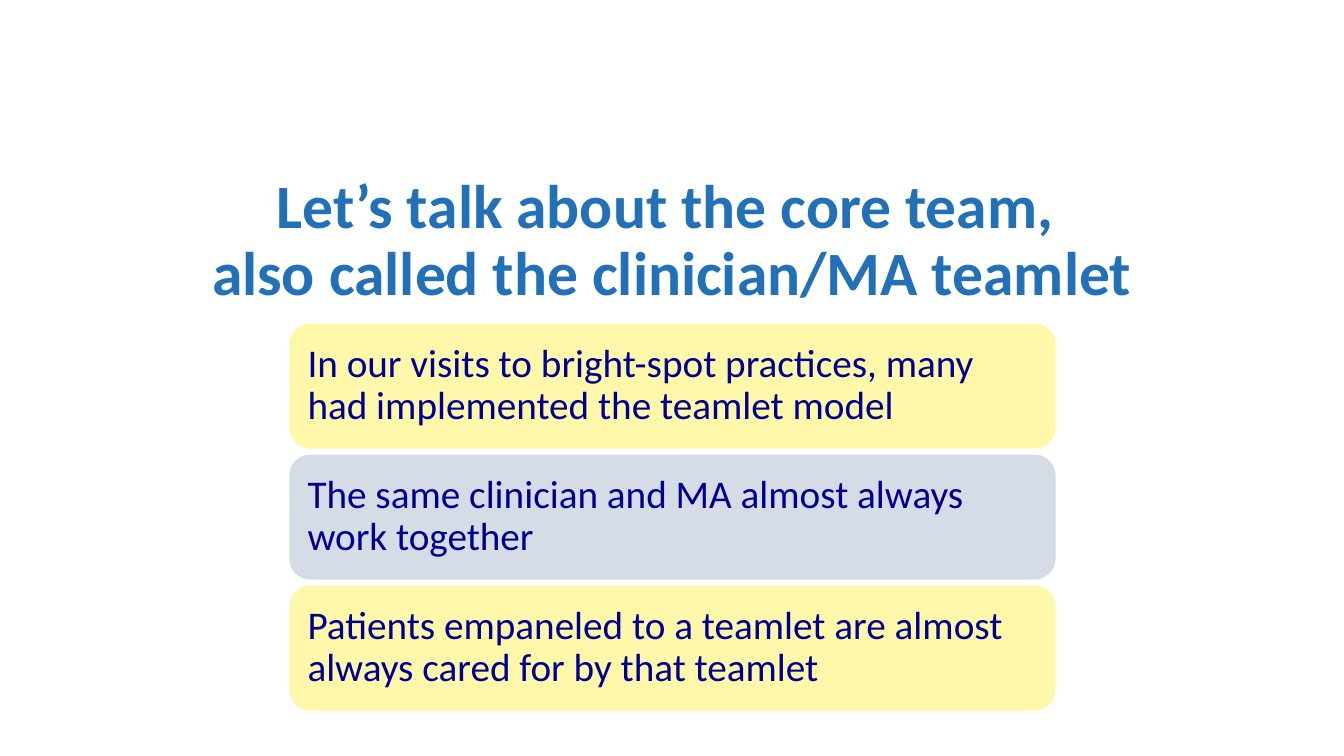
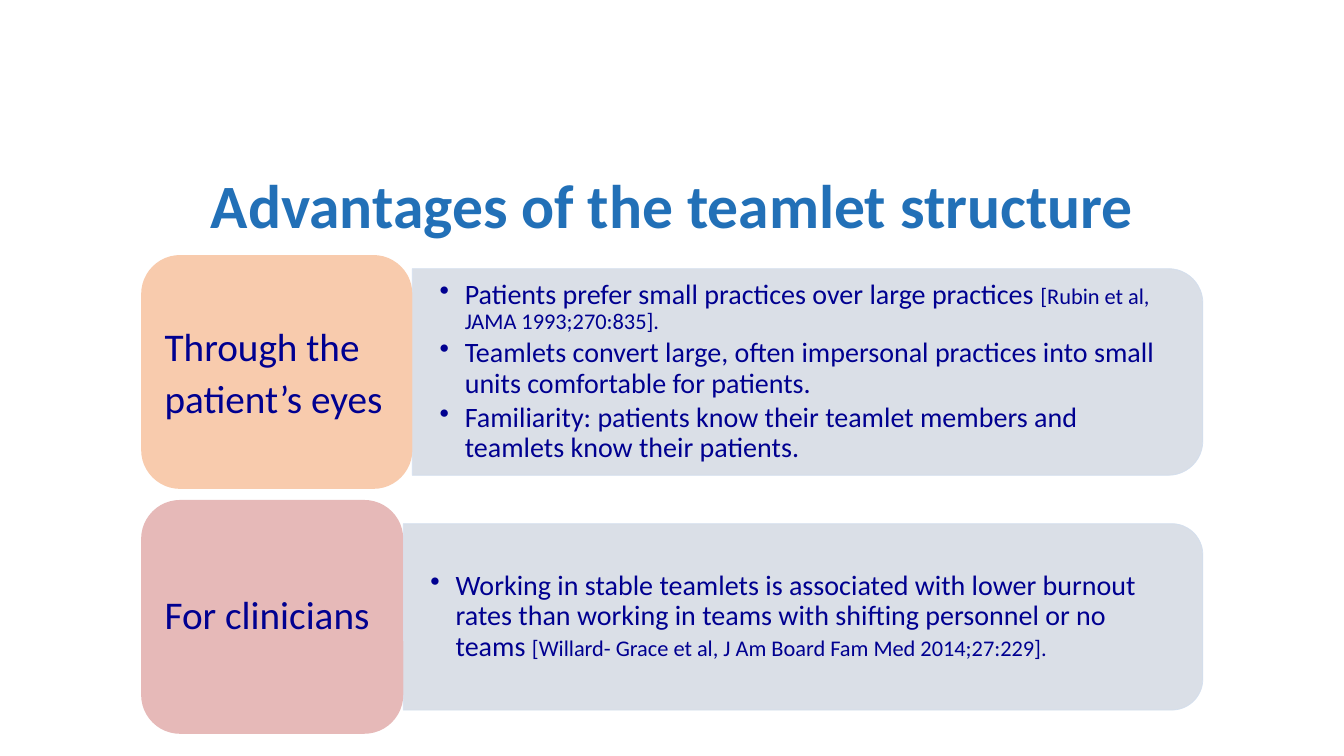
from pptx import Presentation
from pptx.dml.color import RGBColor
from pptx.enum.shapes import MSO_SHAPE as Preset
from pptx.enum.text import MSO_ANCHOR as Anchor, PP_ALIGN as Align
from pptx.oxml.ns import qn
from pptx.util import Inches, Pt
from lxml.etree import SubElement

FONT = "Calibri"
TITLE_BLUE = "2270B7"
NAVY = "000090"
YELLOW = "FFF8AB"
GREY = "D6DCE5"
PALE_BLUE = "D2DEEF"
PEACH = "F8CBAD"
PINK = "E6B9B8"

STATEMENTS = [
    "In our visits to bright-spot practices, many had implemented the teamlet model",
    "The same clinician and MA almost always work together",
    "Patients empaneled to a teamlet are almost always cared for by that teamlet",
]
PATIENT_POINTS = [
    [("Patients prefer small practices over large practices ", 20),
     ("[Rubin et al, JAMA 1993;270:835].", 16)],
    [("Teamlets convert large, often impersonal practices into small units "
      "comfortable for patients.", 20)],
    [("Familiarity: patients know their teamlet members and teamlets know "
      "their patients.", 20)],
]
CLINICIAN_POINTS = [
    [("Working in stable teamlets is associated with lower burnout rates than "
      "working in teams with shifting personnel or no teams ", 20),
     ("[Willard- Grace et al, J Am Board Fam Med 2014;27:229].", 16)],
]


def color(hex_text):
    """Turn a hex string into a colour."""
    return RGBColor.from_string(hex_text)


def add_span(para, text, size, hex_text=NAVY, bold=False):
    """Append one formatted run to a paragraph."""
    span = para.add_run()
    span.text = text
    span.font.name = FONT
    span.font.size = Pt(size)
    span.font.bold = bold
    span.font.color.rgb = color(hex_text)


def set_frame(frame, anchor, side, edge):
    """Set wrapping, anchor and margins of a text frame."""
    frame.word_wrap = True
    frame.vertical_anchor = anchor
    frame.margin_left = frame.margin_right = Inches(side)
    frame.margin_top = frame.margin_bottom = Inches(edge)


def next_para(frame, index):
    """Return the first paragraph of a frame, or a new one after it."""
    return frame.add_paragraph() if index else frame.paragraphs[0]


def add_page(deck, title_lines):
    """Add a slide with the shared title style."""
    page = deck.slides.add_slide(deck.slide_layouts[5])
    title = page.shapes.title
    title.left, title.top = Inches(0.92), Inches(1.69)
    title.width, title.height = Inches(11.5), Inches(0.83)
    set_frame(title.text_frame, Anchor.TOP, 0.1, 0.05)
    para = title.text_frame.paragraphs[0]
    para.alignment = Align.CENTER
    para.line_spacing = 0.9
    for index, line in enumerate(title_lines):
        if index:
            para.add_line_break()
        add_span(para, line, 44, TITLE_BLUE, bold=True)
    return page


def add_card(page, left, top, width, height, fill, lines, spacing=0.9, after=0):
    """Add a rounded card holding large left-aligned text."""
    card = page.shapes.add_shape(Preset.ROUNDED_RECTANGLE, Inches(left),
                                 Inches(top), Inches(width), Inches(height))
    card.shadow.inherit = False
    card.fill.solid()
    card.fill.fore_color.rgb = color(fill)
    card.line.fill.background()
    set_frame(card.text_frame, Anchor.MIDDLE, 0.12, 0.06)
    for index, line in enumerate(lines):
        para = next_para(card.text_frame, index)
        para.alignment = Align.LEFT
        para.line_spacing = spacing
        para.space_after = Pt(after)
        add_span(para, line, 28)


def set_opacity(shape, percent):
    """Make the fill and line of a shape partly transparent."""
    for value in shape.element.spPr.iter(qn("a:srgbClr")):
        SubElement(value, qn("a:alpha"), val=str(percent * 1000))


def add_panel(page, left, middle, width, height):
    """Add a panel rounded on its right side, centred on a height."""
    center = left + width / 2
    panel = page.shapes.add_shape(
        Preset.ROUND_2_SAME_RECTANGLE, Inches(center - height / 2),
        Inches(middle - width / 2), Inches(height), Inches(width))
    panel.rotation = 90
    panel.shadow.inherit = False
    panel.fill.solid()
    panel.fill.fore_color.rgb = color(GREY)
    panel.line.color.rgb = color(PALE_BLUE)
    panel.line.width = Pt(0.5)
    set_opacity(panel, 90)


def add_bullets(page, left, middle, width, height, points):
    """Add a bulleted list centred on a height."""
    box = page.shapes.add_textbox(Inches(left), Inches(middle - height / 2),
                                  Inches(width), Inches(height))
    set_frame(box.text_frame, Anchor.MIDDLE, 0.27, 0.14)
    for index, point in enumerate(points):
        para = next_para(box.text_frame, index)
        para.line_spacing = 0.9
        para.space_after = Pt(3)
        props = para._p.get_or_add_pPr()
        props.set("marL", str(Inches(0.25)))
        props.set("indent", str(-Inches(0.25)))
        SubElement(props, qn("a:buChar"), char="•")
        for text, size in point:
            add_span(para, text, size)


def add_advantage(page, top, label_width, fill, label, label_spacing,
                  panel_height, points):
    """Add a labelled card with its panel of bullet points."""
    left, right, height = 1.4, 11.93, 2.32
    panel_left, middle = left + label_width, top + height / 2
    width = right - panel_left
    add_panel(page, panel_left, middle, width, panel_height)
    add_bullets(page, panel_left, middle, width - 0.1, panel_height - 0.2, points)
    add_card(page, left, top, label_width, height, fill, label, *label_spacing)


def build_core_team(deck):
    """Build the slide that introduces the core team."""
    page = add_page(deck, ["Let’s talk about the core team, ",
                           "also called the clinician/MA teamlet"])
    for index, statement in enumerate(STATEMENTS):
        fill = GREY if index % 2 else YELLOW
        add_card(page, 2.87, 3.21 + index * 1.3, 7.6, 1.24, fill, [statement])


def build_advantages(deck):
    """Build the slide on the advantages of teamlets."""
    page = add_page(deck, ["Advantages of the teamlet structure"])
    add_advantage(page, 2.53, 2.69, PEACH, ["Through the", "patient’s eyes"],
                  (1.0, 4.1), 2.05, PATIENT_POINTS)
    add_advantage(page, 4.96, 2.6, PINK, ["For clinicians"],
                  (0.9, 0), 1.85, CLINICIAN_POINTS)


def main():
    """Build and save the deck."""
    deck = Presentation()
    deck.slide_width, deck.slide_height = Inches(13.33), Inches(7.5)
    build_core_team(deck)
    build_advantages(deck)
    deck.save("out.pptx")


if __name__ == "__main__":
    main()
